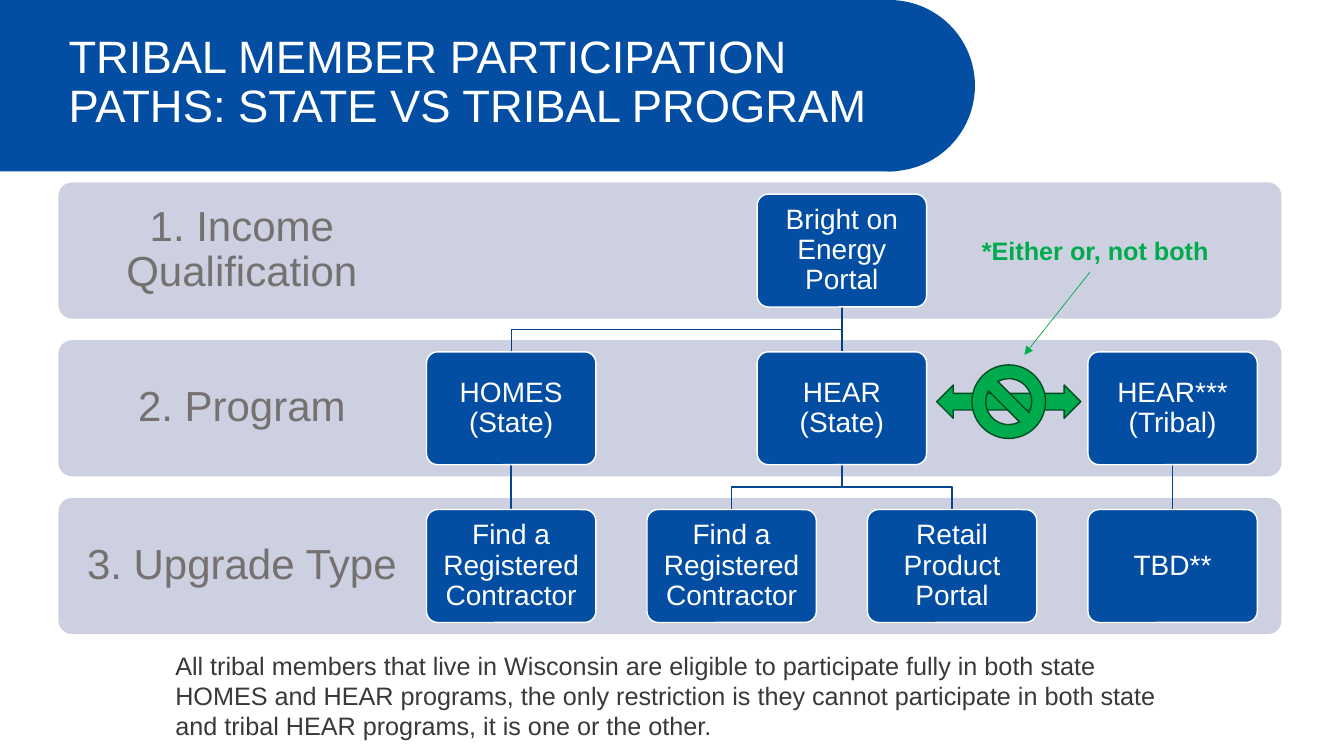
from dataclasses import dataclass

from lxml import etree
from pptx import Presentation
from pptx.dml.color import RGBColor
from pptx.enum.shapes import MSO_CONNECTOR, MSO_SHAPE
from pptx.enum.text import MSO_ANCHOR, MSO_AUTO_SIZE, PP_ALIGN
from pptx.oxml.ns import qn
from pptx.util import Inches, Pt

RECT, OVAL = MSO_SHAPE.RECTANGLE, MSO_SHAPE.OVAL
ROUNDED = MSO_SHAPE.ROUNDED_RECTANGLE
DOUBLE_ARROW, NO_SIGN = MSO_SHAPE.LEFT_RIGHT_ARROW, MSO_SHAPE.NO_SYMBOL
STRAIGHT = MSO_CONNECTOR.STRAIGHT
LEFT, CENTER = PP_ALIGN.LEFT, PP_ALIGN.CENTER
TOP, MIDDLE = MSO_ANCHOR.TOP, MSO_ANCHOR.MIDDLE
FIXED = MSO_AUTO_SIZE.NONE

BLUE = RGBColor(0x03, 0x4E, 0xA2)
LINK_UPPER = RGBColor(0x02, 0x3E, 0x82)
LINK_LOWER = RGBColor(0x03, 0x47, 0x93)
BAND_GRAY = RGBColor(0xCC, 0xD0, 0xE0)
LABEL_GRAY = RGBColor(0x76, 0x71, 0x71)
NOTE_GRAY = RGBColor(0x3B, 0x38, 0x38)
GREEN = RGBColor(0x00, 0xAB, 0x4E)
DARK_GREEN = RGBColor(0x00, 0x4B, 0x22)
WHITE = RGBColor(0xFF, 0xFF, 0xFF)
FONT = "Arial"

# Grid in inches: three rows (bands), four columns of boxes
BAND_X, BAND_W, BAND_H, LABEL_W = 0.58, 12.13, 1.35, 3.64
ROW_Y, ROW_STEP = 1.81, (4.94 - 1.81) / 2
COL_X, COL_STEP = 4.23, (10.79 - 4.23) / 3
NODE_W, NODE_H = 1.68, 1.12
NODE_DY = (BAND_H - NODE_H) / 2


@dataclass(frozen=True)
class Node:
    text: str
    col: float
    row: int

    @property
    def x(self) -> float:
        return COL_X + self.col * COL_STEP

    @property
    def y(self) -> float:
        return ROW_Y + self.row * ROW_STEP + NODE_DY

    @property
    def center(self) -> float:
        return self.x + NODE_W / 2


@dataclass(frozen=True)
class Link:
    parent: Node
    child: Node


BANDS = ["1. Income Qualification", "2. Program", "3. Upgrade Type"]
PORTAL = Node("Bright on Energy Portal", 1.5, 0)
HOMES = Node("HOMES (State)", 0, 1)
HEAR_STATE = Node("HEAR (State)", 1.5, 1)
HEAR_TRIBAL = Node("HEAR*** (Tribal)", 3, 1)
HOMES_FIND = Node("Find a Registered Contractor", 0, 2)
HEAR_FIND = Node("Find a Registered Contractor", 1, 2)
RETAIL = Node("Retail Product Portal", 2, 2)
TBD = Node("TBD**", 3, 2)
NODES = [PORTAL, HOMES, HEAR_STATE, HEAR_TRIBAL, HOMES_FIND, HEAR_FIND, RETAIL, TBD]
LINKS = [
    Link(PORTAL, HOMES), Link(PORTAL, HEAR_STATE), Link(HOMES, HOMES_FIND),
    Link(HEAR_STATE, HEAR_FIND), Link(HEAR_STATE, RETAIL), Link(HEAR_TRIBAL, TBD),
]


def write(shape, text: str, size: float, color: RGBColor, align=LEFT, anchor=TOP,
          spacing: float = 1.0, inset: float | None = None, bold: bool = False) -> None:
    tf = shape.text_frame
    tf.word_wrap, tf.auto_size, tf.vertical_anchor = True, FIXED, anchor
    if inset is not None:
        tf.margin_left = tf.margin_right = tf.margin_top = tf.margin_bottom = Inches(inset)
    p = tf.paragraphs[0]
    p.alignment, p.line_spacing = align, spacing
    r = p.add_run()
    r.text = text
    r.font.name, r.font.size, r.font.bold = FONT, Pt(size), bold
    r.font.color.rgb = color


def add_block(s, kind, x: float, y: float, w: float, h: float,
              fill: RGBColor, outline: RGBColor | None = None):
    sp = s.shapes.add_shape(kind, Inches(x), Inches(y), Inches(w), Inches(h))
    sp.shadow.inherit = False
    sp.fill.solid()
    sp.fill.fore_color.rgb = fill
    if outline is None:
        sp.line.fill.background()
    else:
        sp.line.color.rgb, sp.line.width = outline, Pt(1)
    if kind == ROUNDED:
        sp.adjustments[0] = 0.1
    return sp


def add_text(s, x: float, y: float, w: float, h: float):
    return s.shapes.add_textbox(Inches(x), Inches(y), Inches(w), Inches(h))


def add_line(s, x1: float, y1: float, x2: float, y2: float,
             color: RGBColor, width: float):
    line = s.shapes.add_connector(STRAIGHT, Inches(x1), Inches(y1), Inches(x2), Inches(y2))
    line.line.color.rgb, line.line.width = color, Pt(width)
    etree.SubElement(line.element.spPr, qn("a:effectLst"))
    return line


def add_link(s, link: Link) -> None:
    x1, y1 = link.parent.center, link.parent.y + NODE_H
    x2, y2 = link.child.center, link.child.y
    color = LINK_UPPER if link.parent.row == 0 else LINK_LOWER
    if x1 == x2:
        add_line(s, x1, y1, x2, y2, color, 1)
        return
    mid = (y1 + y2) / 2
    path = s.shapes.build_freeform(Inches(x1), Inches(y1))
    path.add_line_segments([(Inches(x), Inches(y)) for x, y in
                            ((x1, mid), (x2, mid), (x2, y2))], close=False)
    sp = path.convert_to_shape()
    sp.shadow.inherit = False
    sp.fill.background()
    sp.line.color.rgb, sp.line.width = color, Pt(1)


def add_title(s) -> None:
    # Banner, with the title brought in front of it
    add_block(s, RECT, 0, 0, 8.88, 1.7, BLUE)
    add_block(s, OVAL, 7.97, 0, 1.7, 1.7, BLUE)
    title = s.shapes.title
    title.element.getparent().append(title.element)
    title.left, title.top = Inches(0.58), Inches(0.15)
    title.width, title.height = Inches(8.62), Inches(1.35)
    write(title, "TRIBAL MEMBER PARTICIPATION PATHS: STATE VS TRIBAL PROGRAM",
          32.4, WHITE, anchor=MIDDLE, spacing=0.9)


def add_paths(s) -> None:
    # Row bands with labels
    for row, label in enumerate(BANDS):
        y = ROW_Y + row * ROW_STEP
        add_block(s, ROUNDED, BAND_X, y, BAND_W, BAND_H, BAND_GRAY)
        write(add_text(s, BAND_X, y, LABEL_W, BAND_H), label, 30, LABEL_GRAY,
              CENTER, MIDDLE, 0.9, 0.23)
    # Tree of links and boxes
    for link in LINKS:
        add_link(s, link)
    for node in NODES:
        sp = add_block(s, ROUNDED, node.x, node.y, NODE_W, NODE_H, BLUE, WHITE)
        write(sp, node.text, 20, WHITE, CENTER, MIDDLE, 0.9, 0.08)


def add_restriction(s) -> None:
    # Either-or sign between the two HEAR programs
    add_block(s, DOUBLE_ARROW, 9.29, 3.82, 1.43, 0.33, GREEN, DARK_GREEN)
    add_block(s, NO_SIGN, 9.64, 3.62, 0.73, 0.73, GREEN, DARK_GREEN)
    write(add_text(s, 9.64, 2.29, 2.67, 0.4), "*Either or, not both", 18, GREEN, bold=True)
    pointer = add_line(s, 10.81, 2.7, 10.16, 3.52, GREEN, 0.5)
    ln = pointer.line._get_or_add_ln()
    etree.SubElement(ln, qn("a:tailEnd"), type="triangle")


def main() -> None:
    prs = Presentation()
    prs.slide_width, prs.slide_height = Inches(13.33), Inches(7.5)
    s = prs.slides.add_slide(prs.slide_layouts.get_by_name("Title Only"))
    add_title(s)
    add_paths(s)
    add_restriction(s)
    # Closing note
    write(add_text(s, 1.64, 6.4, 10.06, 1.01),
          "All tribal members that live in Wisconsin are eligible to participate fully in "
          "both state HOMES and HEAR programs, the only restriction is they cannot participate "
          "in both state and tribal HEAR programs, it is one or the other.", 18, NOTE_GRAY)
    prs.save("out.pptx")


if __name__ == "__main__":
    main()
